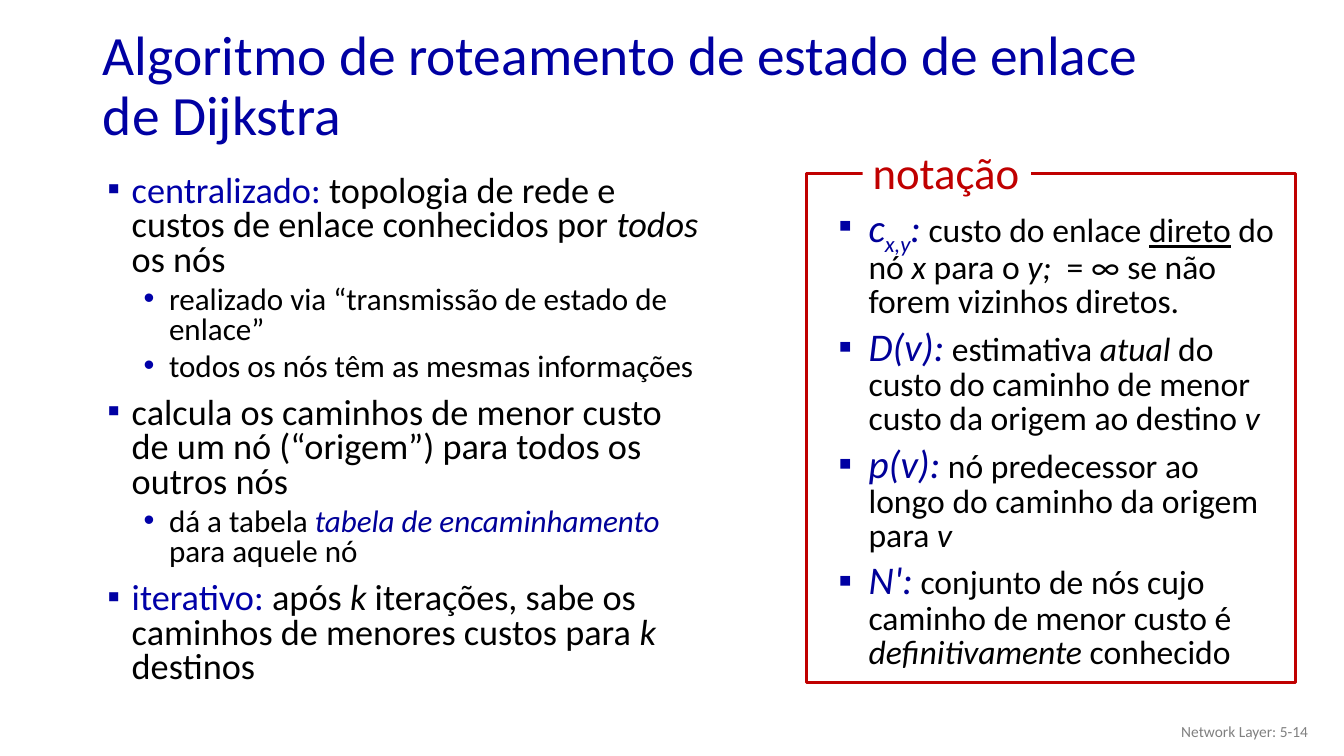
from dataclasses import dataclass

from lxml import etree
from pptx import Presentation
from pptx.dml.color import RGBColor
from pptx.enum.shapes import MSO_SHAPE
from pptx.enum.text import MSO_ANCHOR, MSO_AUTO_SIZE, PP_ALIGN
from pptx.oxml.ns import qn
from pptx.util import Cm, Pt

RECTANGLE = MSO_SHAPE.RECTANGLE
MIDDLE, TOP = MSO_ANCHOR.MIDDLE, MSO_ANCHOR.TOP
NO_FIT = MSO_AUTO_SIZE.NONE
LEFT, RIGHT = PP_ALIGN.LEFT, PP_ALIGN.RIGHT

FONT = "Calibri"
TITLE_BLUE = "0000A3"
KEY_BLUE = "0000A8"
TERM_BLUE = "000099"
RED = "C00000"
GREY = "808080"
BLACK = "000000"
WHITE = "FFFFFF"


@dataclass(frozen=True)
class Area:
    left: float
    top: float
    width: float
    height: float


@dataclass(frozen=True)
class Level:
    size: float
    margin: float
    indent: float
    line_spacing: float
    space_before: float
    bullet: str
    bullet_color: str


@dataclass(frozen=True)
class Span:
    text: str
    color: str = BLACK
    italic: bool = False
    underline: bool = False
    size: float | None = None
    baseline: int = 0


@dataclass(frozen=True)
class Item:
    level: Level
    spans: tuple[Span, ...]


MAIN = Level(25.9, 0.99, -0.61, 0.8, 10, "▪", TITLE_BLUE)
DETAIL = Level(22.2, 1.93, -0.64, 0.8, 5, "•", KEY_BLUE)
NOTATION = Level(24, 1.12, -0.76, 0.85, 6, "▪", TITLE_BLUE)


def slanted(text: str, color: str = BLACK) -> Span:
    return Span(text, color, italic=True)


def term(text: str, baseline: int = 0) -> Span:
    return Span(text, TERM_BLUE, italic=True, size=28, baseline=baseline)


PROPERTIES = (
    Item(MAIN, (
        Span("centralizado: ", KEY_BLUE),
        Span("topologia de rede e custos de enlace conhecidos por "),
        slanted("todos"),
        Span(" os nós"),
    )),
    Item(DETAIL, (Span("realizado via “transmissão de estado de enlace”"),)),
    Item(DETAIL, (Span("todos os nós têm as mesmas informações"),)),
    Item(MAIN, (
        Span("calcula os caminhos de menor custo de um nó (“origem”) para todos os outros nós"),
    )),
    Item(DETAIL, (
        Span("dá a tabela "),
        slanted("tabela de encaminhamento", TERM_BLUE),
        Span(" para aquele nó"),
    )),
    Item(MAIN, (
        Span("iterativo: ", KEY_BLUE),
        Span("após "),
        slanted("k"),
        Span(" iterações, sabe os caminhos de menores custos para "),
        slanted("k "),
        Span("destinos"),
    )),
)

DEFINITIONS = (
    Item(NOTATION, (
        term("c"),
        term("x,y", -25000),
        term(":"),
        Span(" custo do enlace "),
        Span("direto", underline=True),
        Span(" do nó "),
        slanted("x"),
        Span(" para o "),
        slanted("y; "),
        Span(" = ∞ se não forem vizinhos diretos."),
    )),
    Item(NOTATION, (
        term("D(v):"),
        Span(" estimativa "),
        slanted("atual"),
        Span(" do custo do caminho de menor custo da origem ao destino "),
        slanted("v"),
    )),
    Item(NOTATION, (
        term("p(v):"),
        Span(" nó predecessor ao longo do caminho da origem para "),
        slanted("v"),
    )),
    Item(NOTATION, (
        term("N':"),
        Span(" conjunto de nós cujo caminho de menor custo é "),
        slanted("definitivamente"),
        Span(" conhecido"),
    )),
)


def rgb(color: str) -> RGBColor:
    return RGBColor.from_string(color)


def lengths(area: Area) -> tuple[Cm, Cm, Cm, Cm]:
    return Cm(area.left), Cm(area.top), Cm(area.width), Cm(area.height)


def add_span(para, span: Span, size: float) -> None:
    run = para.add_run()
    run.text = span.text
    font = run.font
    font.name = FONT
    font.size = Pt(span.size or size)
    font.color.rgb = rgb(span.color)
    font.italic = span.italic
    font.underline = span.underline
    if span.baseline:
        run._r.get_or_add_rPr().set("baseline", str(span.baseline))


def add_bullet(para, level: Level) -> None:
    properties = para._p.get_or_add_pPr()
    properties.set("marL", str(Cm(level.margin)))
    properties.set("indent", str(Cm(level.indent)))
    color = etree.SubElement(properties, qn("a:buClr"))
    etree.SubElement(color, qn("a:srgbClr"), val=level.bullet_color)
    etree.SubElement(properties, qn("a:buFont"), typeface="Arial")
    etree.SubElement(properties, qn("a:buChar"), char=level.bullet)


def add_list(page, area: Area, items: tuple[Item, ...]) -> None:
    frame = page.shapes.add_textbox(*lengths(area)).text_frame
    frame.word_wrap = True
    for number, item in enumerate(items):
        para = frame.add_paragraph() if number else frame.paragraphs[0]
        para.level = 1 if item.level is DETAIL else 0
        para.line_spacing = item.level.line_spacing
        para.space_before = Pt(item.level.space_before)
        add_bullet(para, item.level)
        for span in item.spans:
            add_span(para, span, item.level.size)


def write_line(box, span: Span, anchor=MIDDLE, align=LEFT, wrap: bool = True):
    frame = box.text_frame
    frame.word_wrap = wrap
    frame.auto_size = NO_FIT
    frame.vertical_anchor = anchor
    para = frame.paragraphs[0]
    para.alignment = align
    add_span(para, span, 18)
    return para


def add_frame(page, area: Area) -> None:
    box = page.shapes.add_shape(RECTANGLE, *lengths(area))
    box.shadow.inherit = False
    box.fill.background()
    box.line.color.rgb = rgb(RED)
    box.line.width = Pt(2.25)


def main() -> None:
    deck = Presentation()
    deck.slide_width, deck.slide_height = Cm(33.87), Cm(19.05)
    page = deck.slides.add_slide(deck.slide_layouts[5])

    title = page.shapes.title
    title.left, title.top, title.width, title.height = lengths(Area(2.34, 0.97, 27.33, 2.49))
    heading = Span("Algoritmo de roteamento de estado de enlace de Dijkstra", TITLE_BLUE, size=39.6)
    write_line(title, heading).line_spacing = 0.9

    footer = page.shapes.add_textbox(*lengths(Area(25.6, 17.91, 7.62, 1.02)))
    write_line(footer, Span("Network Layer: 5-14", GREY, size=11), align=RIGHT)

    add_list(page, Area(2.08, 4.29, 15.85, 13.61), PROPERTIES)
    add_list(page, Area(20.52, 5.08, 11.96, 11.76), DEFINITIONS)
    add_frame(page, Area(20.32, 4.37, 12.34, 12.83))

    label = page.shapes.add_textbox(*lengths(Area(21.74, 3.53, 4.24, 1.63)))
    label.fill.solid()
    label.fill.fore_color.rgb = rgb(WHITE)
    write_line(label, Span("notação", RED, size=32), anchor=TOP, wrap=False)

    deck.save("out.pptx")


if __name__ == "__main__":
    main()
